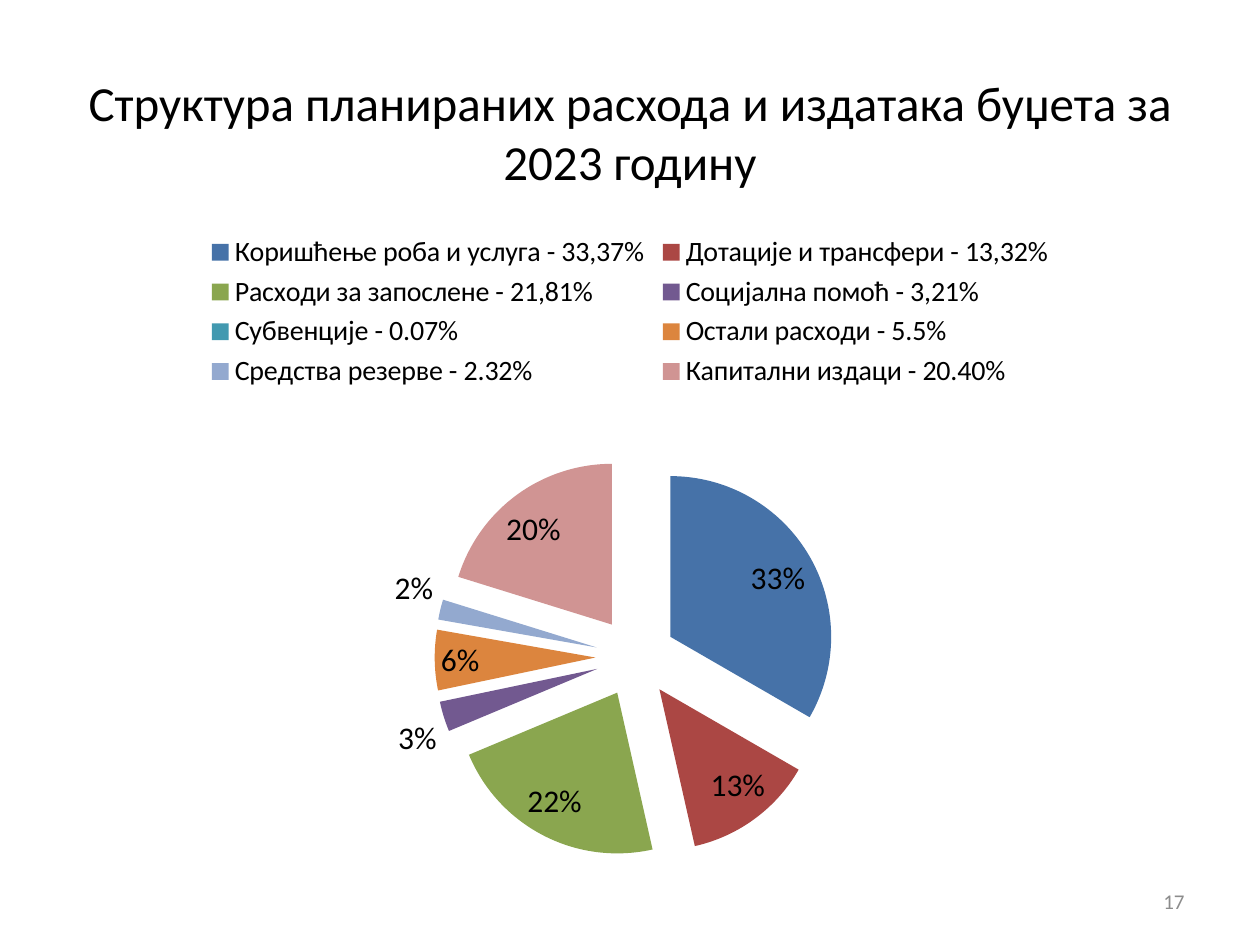
from dataclasses import dataclass

from lxml import etree
from pptx import Presentation
from pptx.chart.data import CategoryChartData
from pptx.dml.color import RGBColor
from pptx.enum.chart import XL_CHART_TYPE, XL_LABEL_POSITION, XL_LEGEND_POSITION
from pptx.enum.text import MSO_ANCHOR, PP_ALIGN
from pptx.oxml.ns import qn
from pptx.util import Inches, Pt

PIE = XL_CHART_TYPE.PIE
BEST_FIT = XL_LABEL_POSITION.BEST_FIT
LEGEND_TOP = XL_LEGEND_POSITION.TOP
MIDDLE = MSO_ANCHOR.MIDDLE
CENTER, RIGHT = PP_ALIGN.CENTER, PP_ALIGN.RIGHT


@dataclass(frozen=True)
class Theme:
    font: str = "Calibri"
    text: str = "000000"
    muted: str = "8C8C8C"
    title_size: int = 28
    label_size: int = 18
    legend_size: int = 16
    number_size: int = 12


THEME = Theme()

# Category, share in whole percent, slice colour
EXPENSES = [
    ("Коришћење роба и услуга - 33,37%", 33, "4672A8"),
    ("Дотације и трансфери - 13,32%", 13, "AB4744"),
    ("Расходи за запослене - 21,81%", 22, "8AA64F"),
    ("Социјална помоћ - 3,21%", 3, "725990"),
    ("Субвенције - 0.07%", 0, "4299B0"),
    ("Остали расходи - 5.5%", 6, "DC853E"),
    ("Средства резерве - 2.32%", 2, "93A9CF"),
    ("Капитални издаци - 20.40%", 20, "D09493"),
]


def style_font(font, size, color):
    font.name = THEME.font
    font.size = Pt(size)
    font.color.rgb = RGBColor.from_string(color)


def add_text(slide, box, text, size, color, alignment):
    shape = slide.shapes.add_textbox(*map(Inches, box))
    text_frame = shape.text_frame
    text_frame.word_wrap = True
    text_frame.vertical_anchor = MIDDLE
    text_frame.text = text
    paragraph = text_frame.paragraphs[0]
    paragraph.alignment = alignment
    style_font(paragraph.runs[0].font, size, color)


def set_plot_layout(chart, left, top, width, height):
    """Fix the inner plot area, in fractions of the chart."""
    plot_area = chart.plots[0]._element.getparent()
    for old_layout in plot_area.findall(qn("c:layout")):
        plot_area.remove(old_layout)
    layout = etree.Element(qn("c:layout"))
    plot_area.insert(0, layout)
    manual = etree.SubElement(layout, qn("c:manualLayout"))
    settings = {"layoutTarget": "inner", "xMode": "edge", "yMode": "edge",
                "x": left, "y": top, "w": width, "h": height}
    for name, value in settings.items():
        etree.SubElement(manual, qn(f"c:{name}")).set("val", str(value))


def explode_slices(series, percent):
    explosion = etree.Element(qn("c:explosion"))
    explosion.set("val", str(percent))
    series._element.find(qn("c:tx")).addnext(explosion)


def hide_leader_lines(series):
    labels = series._element.find(qn("c:dLbls"))
    leader_lines = labels.find(qn("c:showLeaderLines"))
    if leader_lines is None:
        leader_lines = etree.SubElement(labels, qn("c:showLeaderLines"))
    leader_lines.set("val", "0")


def add_expense_pie(slide, box):
    data = CategoryChartData()
    data.categories = [name for name, _, _ in EXPENSES]
    data.add_series("Series 1", [share for _, share, _ in EXPENSES])
    chart = slide.shapes.add_chart(PIE, *map(Inches, box), data).chart
    chart.has_title = False
    style_font(chart.font, THEME.label_size, THEME.text)

    chart.has_legend = True
    chart.legend.position = LEGEND_TOP
    chart.legend.include_in_layout = False
    style_font(chart.legend.font, THEME.legend_size, THEME.text)

    plot = chart.plots[0]
    plot.vary_by_categories = True
    series = plot.series[0]
    explode_slices(series, 25)
    for index, (_, _, color) in enumerate(EXPENSES):
        fill = series.points[index].format.fill
        fill.solid()
        fill.fore_color.rgb = RGBColor.from_string(color)

    labels = series.data_labels
    labels.show_value = False
    labels.show_percentage = True
    labels.number_format = "0%"
    labels.number_format_is_linked = False
    labels.position = BEST_FIT
    style_font(labels.font, THEME.label_size, THEME.text)
    hide_leader_lines(series)
    set_plot_layout(chart, 0.08, 0.34, 0.85, 0.58)


def main():
    presentation = Presentation()
    presentation.slide_width = Inches(10)
    presentation.slide_height = Inches(7.5)
    slide = presentation.slides.add_slide(presentation.slide_layouts[6])

    add_text(slide, (0.5, 0.58, 9, 0.92),
             "Структура планираних расхода и издатака буџета за 2023 годину",
             THEME.title_size, THEME.text, CENTER)
    add_expense_pie(slide, (0.5, 1.75, 9, 5.5))
    add_text(slide, (7.17, 6.95, 2.33, 0.4), "17",
             THEME.number_size, THEME.muted, RIGHT)
    presentation.save("out.pptx")


if __name__ == "__main__":
    main()
